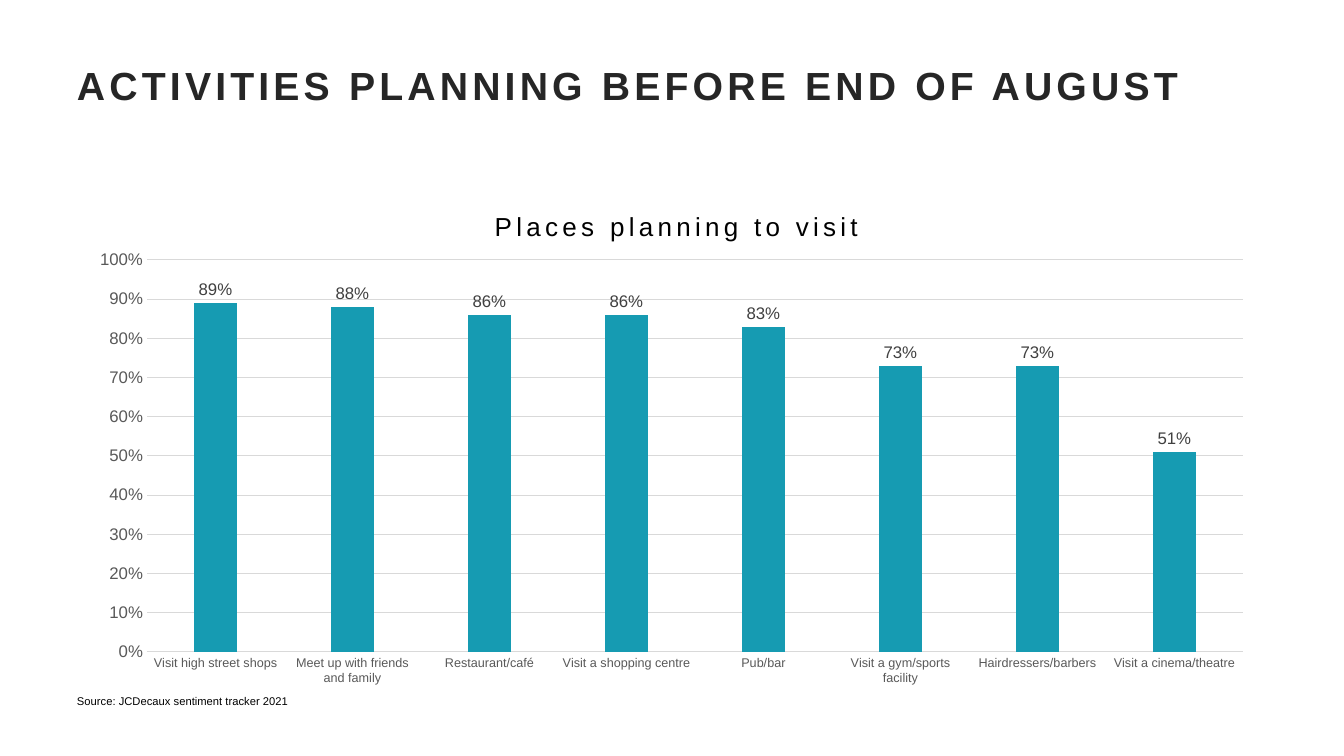
import pptx
import pptx.chart.data
import pptx.dml.color
import pptx.enum.chart
import pptx.enum.text
import pptx.oxml
import pptx.oxml.ns
import pptx.util

PX = 914400 / 100.8  # EMU in one px
MARGIN, CONTENT_WIDTH = 77, 1190
PLACES = {
    "Visit high street shops": 0.89,
    "Meet up with friends and family": 0.88,
    "Restaurant/café": 0.86,
    "Visit a shopping centre": 0.86,
    "Pub/bar": 0.83,
    "Visit a gym/sports facility": 0.73,
    "Hairdressers/barbers": 0.73,
    "Visit a cinema/theatre": 0.51,
}


def px(length):
    return pptx.util.Emu(round(length * PX))


def colour(hex_string):
    return pptx.dml.color.RGBColor.from_string(hex_string)


def style_font(font, size, hex_string, bold=False):
    font.name = "Arial"
    font.size = pptx.util.Pt(size)
    font.bold = bold
    font.color.rgb = colour(hex_string)


def style_line(line, hex_string):
    line.color.rgb = colour(hex_string)
    line.width = pptx.util.Pt(0.75)


def space_letters(run, points):
    run._r.get_or_add_rPr().set("spc", str(points * 100))


def fill_text(shape, text, size, hex_string, line_spacing, bold=False):
    """Write one left-aligned paragraph without insets and return its run."""
    frame = shape.text_frame
    frame.text = text
    frame.word_wrap = True
    frame.auto_size = pptx.enum.text.MSO_AUTO_SIZE.NONE
    frame.vertical_anchor = pptx.enum.text.MSO_ANCHOR.TOP
    frame.margin_left = frame.margin_top = frame.margin_right = frame.margin_bottom = 0
    paragraph = frame.paragraphs[0]
    paragraph.alignment = pptx.enum.text.PP_ALIGN.LEFT
    paragraph.line_spacing = line_spacing
    style_font(paragraph.runs[0].font, size, hex_string, bold)
    return paragraph.runs[0]


def set_layout(parent, index, fractions, inner=False):
    """Place a chart part by fractions of the chart's size."""
    tag = pptx.oxml.ns.qn("c:layout")
    for existing in parent.findall(tag):
        parent.remove(existing)
    target = '<c:layoutTarget val="inner"/>' if inner else ""
    modes = "".join(f'<c:{axis}Mode val="edge"/>' for axis in "xy")
    values = "".join(f'<c:{key} val="{value:.4f}"/>' for key, value in fractions.items())
    parent.insert(index, pptx.oxml.parse_xml(
        f'<c:layout {pptx.oxml.ns.nsdecls("c")}><c:manualLayout>'
        f"{target}{modes}{values}</c:manualLayout></c:layout>"))


def add_title(slide, left, top, width, height):
    title = slide.shapes.title
    title.left, title.top, title.width, title.height = map(px, (left, top, width, height))
    run = fill_text(title, "ACTIVITIES PLANNING BEFORE END OF AUGUST", 28, "262626", 0.85, True)
    space_letters(run, 3)


def add_places_chart(slide, left, top, width, height):
    data = pptx.chart.data.CategoryChartData(number_format="0%")
    data.categories = list(PLACES)
    data.add_series("Series 1", list(PLACES.values()))
    chart = slide.shapes.add_chart(
        pptx.enum.chart.XL_CHART_TYPE.COLUMN_CLUSTERED,
        *map(px, (left, top, width, height)), data).chart
    style_font(chart.font, 10, "000000")
    chart.has_legend = False

    # Chart title
    chart.has_title = True
    chart_title = chart.chart_title
    chart_title.text_frame.text = "Places planning to visit"
    run = chart_title.text_frame.paragraphs[0].runs[0]
    style_font(run.font, 18.6, "000000")
    space_letters(run, 3)
    set_layout(chart_title._element, 1, {"x": 413 / width, "y": 25 / height})

    # Plot area, inside its axes
    plot_area = chart._chartSpace.chart.plotArea
    set_layout(plot_area, 0, {"x": 70 / width, "y": 81 / height,
                              "w": 1096 / width, "h": 392 / height}, inner=True)

    # Axes
    for axis, size in ((chart.category_axis, 9), (chart.value_axis, 12)):
        axis.major_tick_mark = pptx.enum.chart.XL_TICK_MARK.NONE
        axis.minor_tick_mark = pptx.enum.chart.XL_TICK_MARK.NONE
        style_font(axis.tick_labels.font, size, "595959")
    style_line(chart.category_axis.format.line, "D9D9D9")
    value_axis = chart.value_axis
    value_axis.minimum_scale, value_axis.maximum_scale = 0, 1
    value_axis.major_unit = 0.1
    value_axis.format.line.fill.background()
    style_line(value_axis.major_gridlines.format.line, "D9D9D9")
    value_axis.tick_labels.number_format = "0%"
    value_axis.tick_labels.number_format_is_linked = False

    # Columns and their labels
    plot = chart.plots[0]
    plot.gap_width, plot.overlap = 219, -26
    plot.vary_by_categories = False
    series = plot.series[0]
    series.format.fill.solid()
    series.format.fill.fore_color.rgb = colour("169BB2")
    labels = series.data_labels
    labels.show_value = True
    labels.number_format = "0%"
    labels.number_format_is_linked = False
    labels.position = pptx.enum.chart.XL_LABEL_POSITION.OUTSIDE_END
    style_font(labels.font, 12, "404040")


def add_source(slide, left, top, width, height):
    source = slide.shapes.add_textbox(*map(px, (left, top, width, height)))
    fill_text(source, "Source: JCDecaux sentiment tracker 2021", 8, "000000", 0.9)


def main():
    presentation = pptx.Presentation()
    presentation.slide_width = px(1344)
    presentation.slide_height = px(756)
    slide = presentation.slides.add_slide(presentation.slide_layouts[5])
    slide.background.fill.solid()
    slide.background.fill.fore_color.rgb = colour("FFFFFF")
    add_title(slide, MARGIN, 69, CONTENT_WIDTH, 111)
    add_places_chart(slide, MARGIN, 179, CONTENT_WIDTH, 516)
    add_source(slide, MARGIN, 696, CONTENT_WIDTH, 39)
    presentation.save("out.pptx")


if __name__ == "__main__":
    main()
